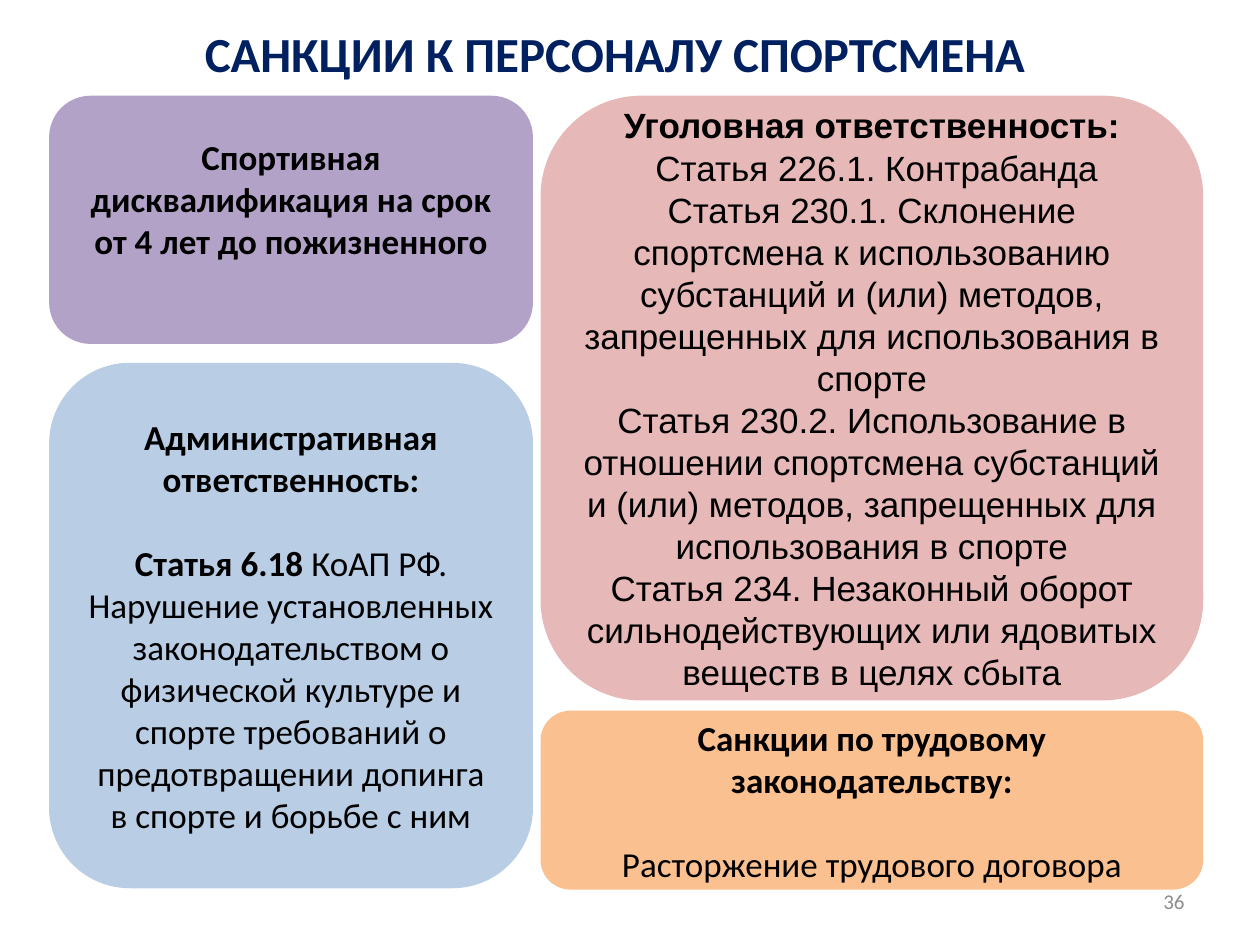
"""Build the slide on sanctions for athlete support staff."""
from dataclasses import dataclass

from pptx import Presentation
from pptx import util as u
from pptx.dml import color
from pptx.enum import shapes, text

MID, LEFT, RIGHT = text.PP_ALIGN.CENTER, 0.39, 4.29
WIDE, SLIM, TOP = 5.26, 3.84, 0.76


@dataclass(frozen=True)
class Run:
    words: str
    bold: bool = False


@dataclass(frozen=True)
class Para:
    runs: tuple[Run, ...]
    gap: int = 0


@dataclass(frozen=True)
class Card:
    left: float
    top: float
    width: float
    height: float
    fill: str
    paras: tuple[Para, ...]
    font: str = "Calibri"
    foot: float = 0.05


@dataclass(frozen=True)
class Label:
    left: float
    top: float
    width: float
    height: float
    words: str
    size: int
    tint: str
    bold: bool
    align: text.PP_ALIGN


def line(words: str, bold: bool = False, gap: int = 0) -> Para:
    return Para((Run(words, bold),), gap)


CARDS = (
    Card(LEFT, TOP, SLIM, 1.97, "B3A2C7", (
        line("Спортивная дисквалификация на срок от 4 лет до пожизненного", True),
    ), foot=0.39),
    Card(RIGHT, TOP, WIDE, 4.8, "E6B9B8", (
        line("Уголовная ответственность:", True),
        line(" Статья 226.1. Контрабанда"),
        line("Статья 230.1. Склонение спортсмена к использованию субстанций "
             "и (или) методов, запрещенных для использования в спорте"),
        line("Статья 230.2. Использование в отношении спортсмена субстанций "
             "и (или) методов, запрещенных для использования в спорте"),
        line("Статья 234. Незаконный оборот сильнодействующих или ядовитых "
             "веществ в целях сбыта"),
    ), font="Arial"),
    Card(LEFT, 2.88, SLIM, 4.17, "B9CDE5", (
        line("Административная ответственность:", True),
        Para((
            Run("Статья 6.18 ", True),
            Run("КоАП РФ. Нарушение установленных законодательством о "
                "физической культуре и спорте требований о предотвращении "
                "допинга в спорте и борьбе с ним"),
        ), gap=24),
    )),
    Card(RIGHT, 5.64, WIDE, 1.42, "FAC090", (
        line("Санкции по трудовому законодательству:", True),
        line("Расторжение трудового договора", gap=24),
    )),
)

LABELS = (
    Label(0.98, 0.08, 7.8, 0.68, "САНКЦИИ К ПЕРСОНАЛУ СПОРТСМЕНА",
          28, "002060", True, MID),
    Label(7.17, 6.95, 2.33, 0.4, "36", 12, "8C8C8C", False, text.PP_ALIGN.RIGHT),
)


def rgb(code: str) -> color.RGBColor:
    return color.RGBColor.from_string(code)


def place(item: Card | Label) -> tuple[u.Length, ...]:
    return tuple(map(u.Inches, (item.left, item.top, item.width, item.height)))


def style(target, values: dict) -> None:
    for name, value in values.items():
        setattr(target, name, value)


def write(para, run: Run, font: str, size: int, tint: str) -> None:
    part = para.add_run()
    part.text = run.words
    style(part.font, {"name": font, "size": u.Pt(size), "bold": run.bold})
    part.font.color.rgb = rgb(tint)


def draw_card(slide, card: Card) -> None:
    box = slide.shapes.add_shape(shapes.MSO_SHAPE.ROUNDED_RECTANGLE, *place(card))
    box.shadow.inherit = False
    box.fill.solid()
    box.fill.fore_color.rgb = rgb(card.fill)
    box.line.fill.background()
    frame = box.text_frame
    style(frame, {"word_wrap": True, "vertical_anchor": text.MSO_ANCHOR.MIDDLE,
                  "margin_bottom": u.Inches(card.foot)})
    for index, para in enumerate(card.paras):
        block = frame.add_paragraph() if index else frame.paragraphs[0]
        style(block, {"alignment": MID, "line_spacing": u.Pt(24),
                      "space_before": u.Pt(para.gap)})
        for run in para.runs:
            write(block, run, card.font, 20, "000000")


def draw_label(slide, label: Label) -> None:
    frame = slide.shapes.add_textbox(*place(label)).text_frame
    style(frame, {"word_wrap": True, "vertical_anchor": text.MSO_ANCHOR.MIDDLE})
    block = frame.paragraphs[0]
    block.alignment = label.align
    write(block, Run(label.words, label.bold), "Calibri", label.size, label.tint)


def main() -> None:
    deck = Presentation()
    style(deck, {"slide_width": u.Inches(10), "slide_height": u.Inches(7.5)})
    slide = deck.slides.add_slide(deck.slide_layouts[6])
    for card in CARDS:
        draw_card(slide, card)
    for label in LABELS:
        draw_label(slide, label)
    deck.save("out.pptx")


if __name__ == "__main__":
    main()
